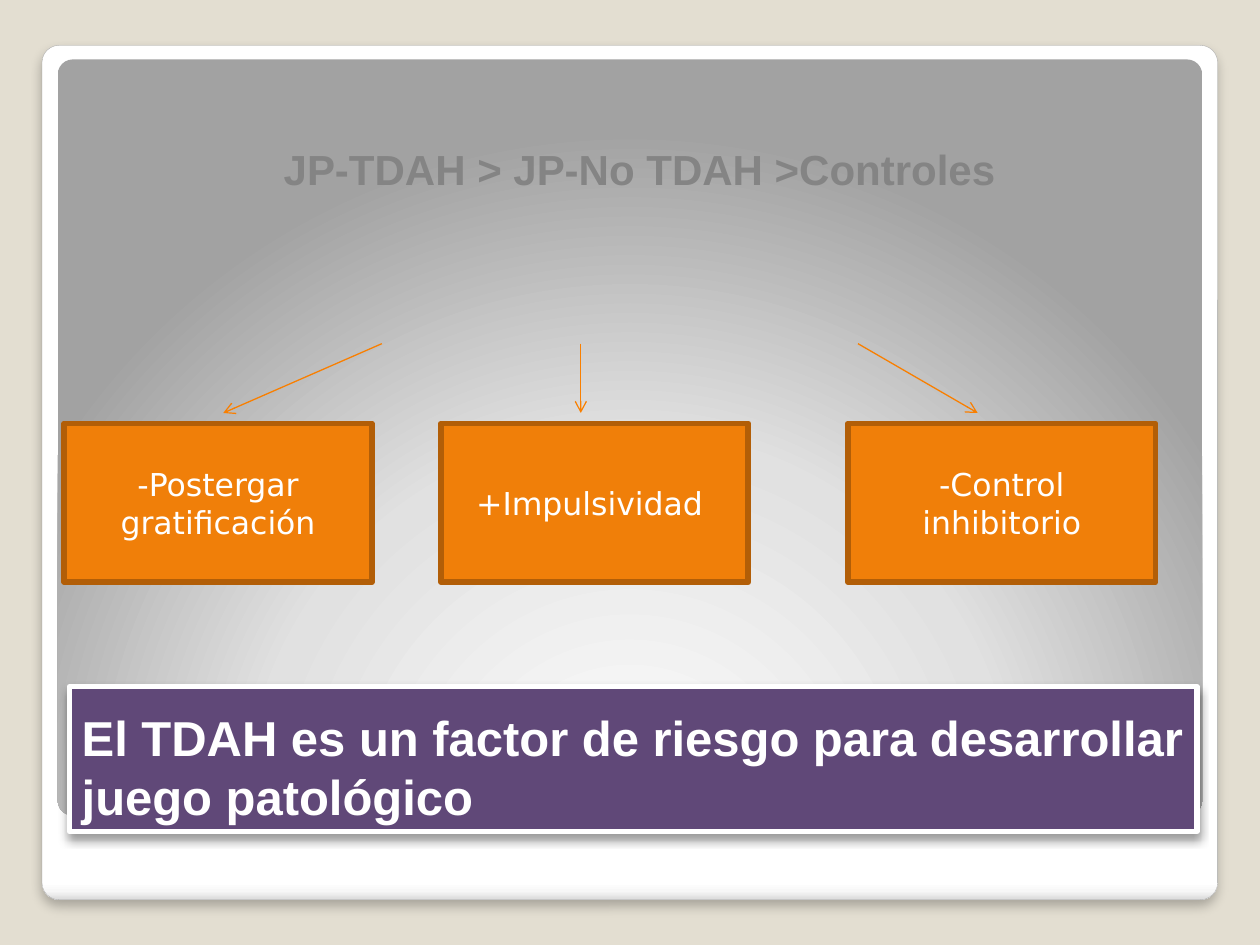
from lxml import etree
from pptx import Presentation
from pptx.dml.color import RGBColor
from pptx.enum.shapes import MSO_CONNECTOR, MSO_SHAPE
from pptx.enum.text import MSO_ANCHOR, PP_ALIGN
from pptx.oxml.ns import qn
from pptx.util import Pt

RECT, ROUNDED = MSO_SHAPE.RECTANGLE, MSO_SHAPE.ROUNDED_RECTANGLE
STRAIGHT = MSO_CONNECTOR.STRAIGHT
TOP, MIDDLE, BOTTOM = MSO_ANCHOR.TOP, MSO_ANCHOR.MIDDLE, MSO_ANCHOR.BOTTOM
LEFT, CENTER = PP_ALIGN.LEFT, PP_ALIGN.CENTER


def rgb(value):
    return RGBColor.from_string(value)


def add_xml(parent, tag, **attributes):
    return etree.SubElement(parent, qn(tag), {k: str(v) for k, v in attributes.items()})


class SlideBuilder:
    heading_font = "Arial"
    body_font = "DejaVu Sans"
    white = "FFFFFF"
    orange, dark_orange, arrow_orange = "F07F09", "B25E07", "F97F00"
    purple, gray = "604878", "848484"

    def __init__(self, slide, background):
        self.slide = slide
        slide.background.fill.solid()
        slide.background.fill.fore_color.rgb = rgb(background)

    def box(self, bounds, fill=None, line=None, line_width=0, kind=RECT):
        shape = self.slide.shapes.add_shape(kind, *map(Pt, bounds))
        shape.shadow.inherit = False
        if fill:
            shape.fill.solid()
            shape.fill.fore_color.rgb = rgb(fill)
        if line:
            shape.line.color.rgb = rgb(line)
            shape.line.width = Pt(line_width)
        else:
            shape.line.fill.background()
        return shape

    def panel(self, bounds, stops, line=None, line_width=0, focus=None):
        """Rounded panel with a vertical gradient, or a circular one around focus."""
        shape = self.box(bounds, None, line, line_width, ROUNDED)
        shape.adjustments[0] = 0.02
        shape.fill.gradient()
        gradient = shape.element.spPr.find(qn("a:gradFill"))
        for child in list(gradient):
            gradient.remove(child)
        stop_list = add_xml(gradient, "a:gsLst")
        for position, color in stops:
            stop = add_xml(stop_list, "a:gs", pos=position * 1000)
            add_xml(stop, "a:srgbClr", val=color)
        if focus:
            circle = add_xml(gradient, "a:path", path="circle")
            sides = {side: value * 1000 for side, value in zip("ltrb", focus)}
            add_xml(circle, "a:fillToRect", **sides)
        else:
            add_xml(gradient, "a:lin", ang=90 * 60000, scaled=0)
        return shape

    def drop_shadow(self, shape, opacity, blur, distance):
        effects = shape.element.spPr.find(qn("a:effectLst"))
        shadow = add_xml(effects, "a:outerShdw", blurRad=Pt(blur), dist=Pt(distance),
                         dir=90 * 60000, algn="t", rotWithShape=0)
        color = add_xml(shadow, "a:srgbClr", val="000000")
        add_xml(color, "a:alpha", val=opacity * 1000)

    def set_text(self, shape, text, size, color, font, bold=False, align=CENTER, anchor=MIDDLE):
        frame = shape.text_frame
        frame.word_wrap = True
        frame.vertical_anchor = anchor
        paragraph = frame.paragraphs[0]
        paragraph.text = text
        paragraph.alignment = align
        paragraph.font.size = Pt(size)
        paragraph.font.bold = bold
        paragraph.font.name = font
        paragraph.font.color.rgb = rgb(color)

    def comparison(self, bounds, text):
        shape = self.slide.shapes.add_textbox(*map(Pt, bounds))
        shape.text_frame.margin_left = Pt(14.4)
        self.set_text(shape, text, 24, self.gray, self.heading_font, True, anchor=TOP)

    def conclusion(self, bounds, text):
        shape = self.box(bounds, self.purple, self.white, 3)
        self.drop_shadow(shape, 40, 5.2, 3)
        self.set_text(shape, text, 28, self.white, self.heading_font, True, LEFT, BOTTOM)

    def trait(self, bounds, text):
        shape = self.box(bounds, self.orange, self.dark_orange, 3.35)
        self.set_text(shape, text, 18, self.white, self.body_font)

    def arrow(self, start, end):
        connector = self.slide.shapes.add_connector(STRAIGHT, *map(Pt, start + end))
        connector.line.color.rgb = rgb(self.arrow_orange)
        connector.line.width = Pt(0.75)
        properties = connector.element.spPr
        add_xml(properties.find(qn("a:ln")), "a:tailEnd", type="arrow")
        add_xml(properties, "a:effectLst")


def main():
    deck = Presentation()
    deck.slide_width, deck.slide_height = Pt(720), Pt(540)
    builder = SlideBuilder(deck.slides.add_slide(deck.slide_layouts[6]), "E3DED1")

    frame = builder.panel((24, 25.9, 671.8, 488.2),
                          [(0, "FFFFFF"), (98, "FFFFFF"), (99, "F7F7F7"), (100, "DADADA")],
                          "A4A4A4", 0.16)
    builder.drop_shadow(frame, 25, 6, 4)
    builder.panel((33, 34, 654, 432), [(0, "FFFFFF"), (55, "E1E1E1"), (100, "A2A2A2")],
                  focus=(50, 175, 50, -75))

    builder.conclusion((39.6, 392.4, 644.4, 82.8),
                       "El TDAH es un factor de riesgo para desarrollar juego patológico")
    builder.comparison((39.6, 78.5, 644.4, 36), "JP-TDAH > JP-No TDAH >Controles")

    traits = [
        ("-Postergar gratificación", 36.8, 218.2, 127.6),
        ("+Impulsividad ", 252, 331.9, 331.9),
        ("-Control inhibitorio", 484.6, 490.3, 558.7),
    ]
    for text, left, arrow_start, arrow_end in traits:
        builder.trait((left, 242, 175.7, 90.7), text)
        builder.arrow((arrow_start, 196.4), (arrow_end, 236))

    deck.save("out.pptx")


if __name__ == "__main__":
    main()
